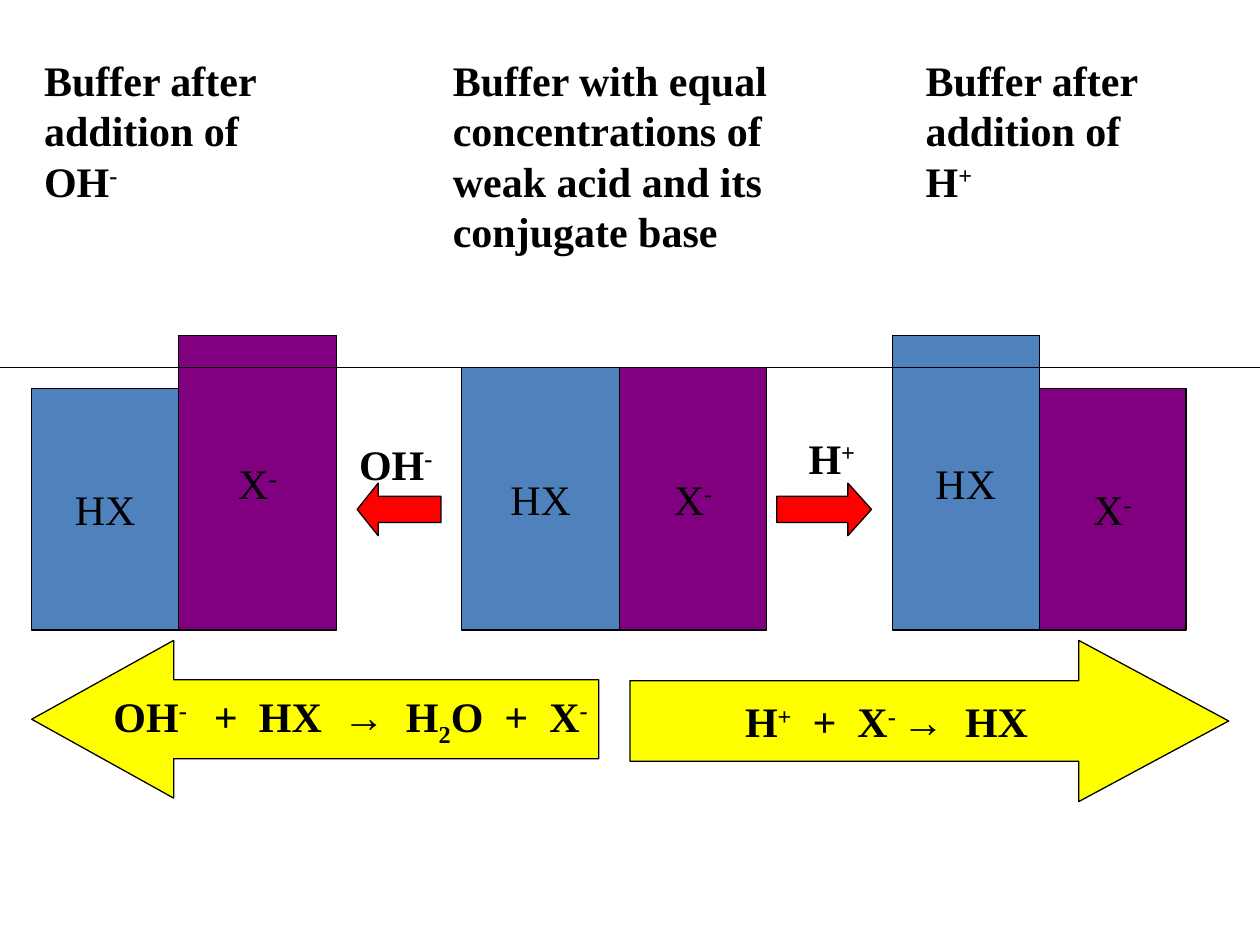
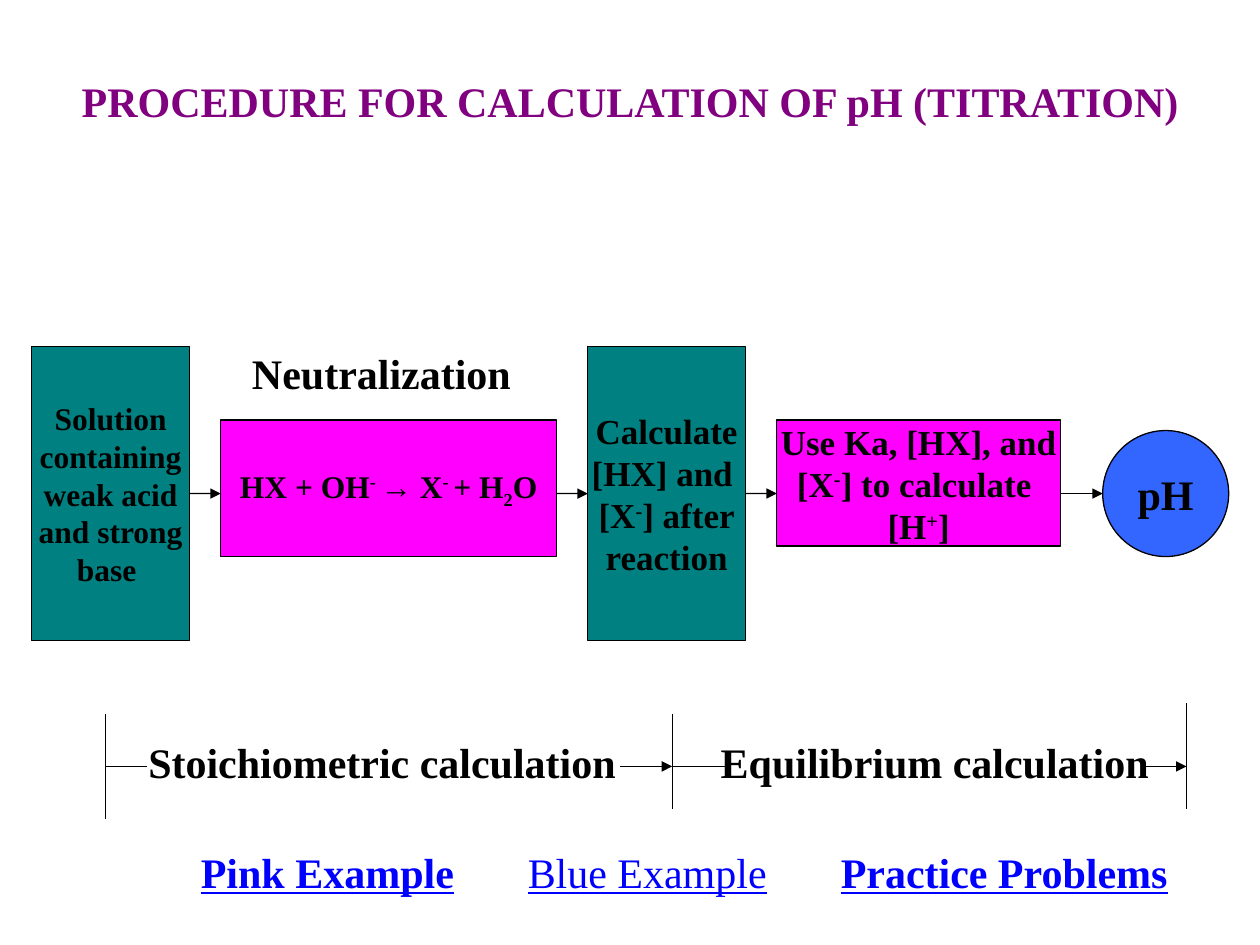
from pptx import Presentation
from pptx.dml.color import RGBColor
from pptx.enum.shapes import MSO_CONNECTOR as Connector, MSO_SHAPE as Shape
from pptx.enum.text import MSO_ANCHOR as Anchor, PP_ALIGN as Align
from pptx.oxml.ns import qn
from pptx.util import Cm, Pt
from lxml.etree import SubElement

BLACK = RGBColor(0x00, 0x00, 0x00)
STEEL = RGBColor(0x4F, 0x81, 0xBD)
PURPLE = RGBColor(0x80, 0x00, 0x80)
RED = RGBColor(0xFF, 0x00, 0x00)
YELLOW = RGBColor(0xFF, 0xFF, 0x00)
TEAL = RGBColor(0x00, 0x80, 0x80)
MAGENTA = RGBColor(0xFF, 0x00, 0xFF)
BLUE = RGBColor(0x33, 0x66, 0xFF)
LINK = RGBColor(0x00, 0x00, 0xFF)

FONT = "Times New Roman"
BASELINES = {"^": "30000", "_": "-25000"}
LEFT_SITE, RIGHT_SITE = 1, 3

PAGE_WIDTH, PAGE_HEIGHT = 25.4, 19.05
MARGIN = 0.64
BAR_BASE = 12.7
RAISED, EVEN, LOWERED = 6.77, 7.41, 7.83
FLOW_Y = 9.95
SPAN_Y = 15.45


def write(frame, lines, size=24, bold=True, color=BLACK, align=Align.LEFT, underline=None):
    for index, line in enumerate(lines):
        para = frame.paragraphs[0] if index == 0 else frame.add_paragraph()
        para.alignment = align
        for piece in line.split("|"):
            span = para.add_run()
            shift = BASELINES.get(piece[0])
            span.text = piece[1:] if shift else piece
            font = span.font
            font.name, font.size, font.bold = FONT, Pt(size), bold
            font.underline = underline
            font.color.rgb = color
            if shift:
                font._element.set("baseline", shift)


def add_text(page, left, top, width, lines, **style):
    height = 0.26 + 1.02 * len(lines)
    box = page.shapes.add_textbox(Cm(left), Cm(top), Cm(width), Cm(height))
    box.text_frame.word_wrap = True
    write(box.text_frame, lines, **style)


def add_block(page, kind, left, top, width, height, fill, lines=(), size=24, bold=True):
    block = page.shapes.add_shape(kind, Cm(left), Cm(top), Cm(width), Cm(height))
    block.shadow.inherit = False
    block.fill.solid()
    block.fill.fore_color.rgb = fill
    block.line.color.rgb = BLACK
    block.line.width = Pt(0.75)
    block.text_frame.word_wrap = False
    block.text_frame.vertical_anchor = Anchor.MIDDLE
    write(block.text_frame, lines, size, bold, align=Align.CENTER)
    return block


def add_arrow_block(page, kind, left, top, width, height, head, fill, lines=()):
    arrow = add_block(page, kind, left, top, width, height, fill, lines)
    arrow.adjustments[0] = 0.5
    arrow.adjustments[1] = head


def add_line(page, x1, y1, x2, y2, arrow=False):
    line = page.shapes.add_connector(Connector.STRAIGHT, Cm(x1), Cm(y1), Cm(x2), Cm(y2))
    line.line.color.rgb = BLACK
    line.line.width = Pt(0.75)
    properties = line.element.spPr
    if arrow:
        SubElement(properties.find(qn("a:ln")), qn("a:tailEnd"), type="triangle")
    SubElement(properties, qn("a:effectLst"))
    return line


def add_bar_pair(page, left, acid_width, base_width, acid_top, base_top):
    add_block(page, Shape.RECTANGLE, left, acid_top, acid_width, BAR_BASE - acid_top,
              STEEL, ["HX"], bold=False)
    add_block(page, Shape.RECTANGLE, left + acid_width, base_top, base_width,
              BAR_BASE - base_top, PURPLE, ["X|^-"], bold=False)


def build_buffer_page(page):
    add_text(page, MARGIN, 0.97, 6, ["Buffer after", "addition of", "OH|^-"])
    add_text(page, 8.88, 0.97, 7.5, ["Buffer with equal", "concentrations of",
                                     "weak acid and its", "conjugate base"])
    add_text(page, 18.41, 0.97, 6, ["Buffer after", "addition of", "H|^+"])

    add_bar_pair(page, MARGIN, 2.96, 3.18, LOWERED, RAISED)
    add_bar_pair(page, 9.31, 3.18, 2.96, EVEN, EVEN)
    add_bar_pair(page, 17.99, 2.96, 2.96, RAISED, LOWERED)
    add_line(page, 0, EVEN, PAGE_WIDTH, EVEN)

    add_text(page, 6.99, 8.71, 2.2, ["OH|^-"])
    add_text(page, 16.05, 8.59, 1.5, ["H|^+"])
    add_arrow_block(page, Shape.LEFT_ARROW, 7.2, 9.74, 1.69, 1.06, 0.4, RED)
    add_arrow_block(page, Shape.RIGHT_ARROW, 15.66, 9.74, 1.91, 1.06, 0.45, RED)
    add_arrow_block(page, Shape.LEFT_ARROW, MARGIN, 12.91, 11.43, 3.18, 0.9, YELLOW,
                    ["OH|^- |  +  HX  →  H|_2|O  +  X|^-"])
    add_arrow_block(page, Shape.RIGHT_ARROW, 12.7, 12.91, 12.07, 3.25, 0.93, YELLOW,
                    ["H|^+|  +  X|^- |→  HX "])


def build_procedure_page(page):
    add_text(page, MARGIN, 1.4, 24.13, ["PROCEDURE FOR CALCULATION OF pH (TITRATION)"],
             color=PURPLE, align=Align.CENTER)

    solution = add_block(
        page, Shape.RECTANGLE, MARGIN, 6.99, 3.18, 5.92, TEAL,
        ["Solution", "containing", "weak acid", "and strong", "base "], size=18)
    add_block(page, Shape.RECTANGLE, 4.45, 8.47, 6.77, 2.75, MAGENTA,
              ["HX + OH|^- |→ X|^- |+ H|_2|O"], size=18)
    calculate = add_block(
        page, Shape.RECTANGLE, 11.85, 6.99, 3.18, 5.92, TEAL,
        ["Calculate", "[HX] and ", "[X|^-|] after", "reaction"], size=20)
    add_block(page, Shape.RECTANGLE, 15.66, 8.47, 5.72, 2.54, MAGENTA,
              ["Use Ka, [HX], and", "[X|^-|] to calculate ", "[H|^+|]"], size=20)
    add_block(page, Shape.OVAL, 22.23, 8.68, 2.54, 2.54, BLUE, ["pH"])
    add_text(page, 4.83, 6.88, 6.2, ["Neutralization"])

    steps = [add_line(page, start, FLOW_Y, end, FLOW_Y, arrow=True)
             for start, end in ((3.82, 4.45), (11.22, 11.85), (15.03, 15.66), (21.38, 22.23))]
    steps[0].begin_connect(solution, RIGHT_SITE)
    steps[1].end_connect(calculate, LEFT_SITE)
    steps[2].begin_connect(calculate, RIGHT_SITE)

    for x, top, bottom in ((2.12, 14.39, 16.51), (13.55, 14.39, 16.3), (23.92, 14.18, 16.3)):
        add_line(page, x, top, x, bottom)
    for start, end, arrow in ((2.12, 2.96, False), (12.49, 13.55, True),
                              (13.55, 14.61, False), (23.07, 23.92, True)):
        add_line(page, start, SPAN_Y, end, SPAN_Y, arrow)
    add_text(page, 2.74, 14.73, 10.4, ["Stoichiometric calculation"])
    add_text(page, 14.28, 14.73, 9.6, ["Equilibrium calculation"])

    for left, label, bold in ((3.8, "Pink Example", True), (10.39, "Blue Example", False),
                              (16.7, "Practice Problems", True)):
        add_text(page, left, 16.94, 7.4, [label], bold=bold, color=LINK, underline=True)


def main():
    deck = Presentation()
    deck.slide_width, deck.slide_height = Cm(PAGE_WIDTH), Cm(PAGE_HEIGHT)
    for build in (build_buffer_page, build_procedure_page):
        build(deck.slides.add_slide(deck.slide_layouts[6]))
    deck.save("out.pptx")


if __name__ == "__main__":
    main()
